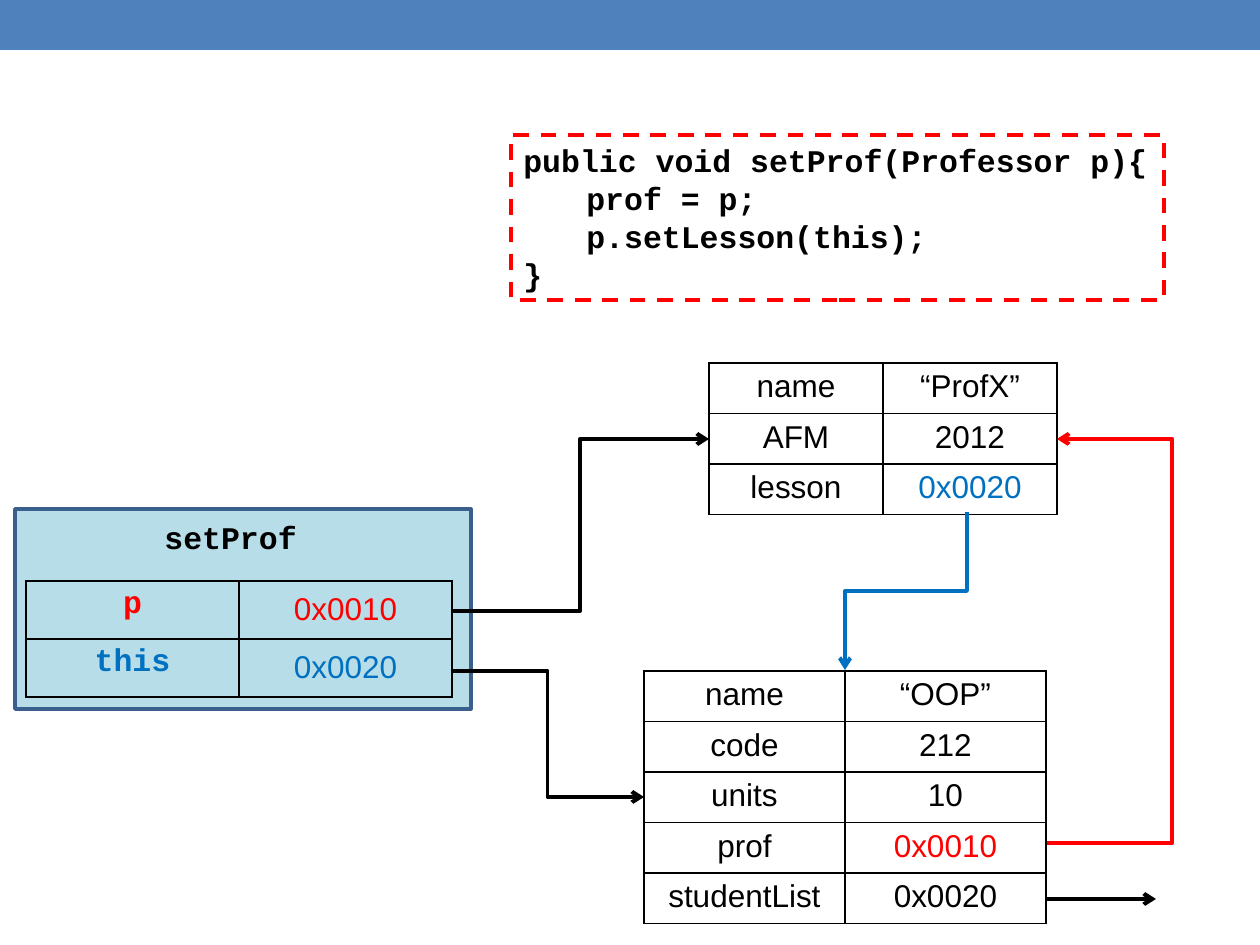
from lxml import etree
from pptx import Presentation
from pptx.dml.color import RGBColor
from pptx.enum.dml import MSO_LINE
from pptx.enum.shapes import MSO_CONNECTOR, MSO_SHAPE
from pptx.enum.text import MSO_ANCHOR, PP_ALIGN
from pptx.oxml.ns import qn
from pptx.util import Emu, Pt

RECT = MSO_SHAPE.RECTANGLE
ELBOW, STRAIGHT = MSO_CONNECTOR.ELBOW, MSO_CONNECTOR.STRAIGHT
DASH = MSO_LINE.DASH
LEFT, CENTER = PP_ALIGN.LEFT, PP_ALIGN.CENTER
TOP, MIDDLE = MSO_ANCHOR.TOP, MSO_ANCHOR.MIDDLE
PX = 914400 / 126
SANS, MONO = "Arial", "Courier New"
COLORS = {
    "black": "000000", "red": "FF0000", "blue": "0070C0",
    "bar": "4F81BD", "frame": "B7DEE8", "frame_edge": "3A5F8C",
}


def px(*values):
    return [Emu(round(value * PX)) for value in values]


def add_text(paragraph, text, font, color, align):
    paragraph.alignment = align
    run = paragraph.add_run()
    run.text = text
    run.font.name = font
    run.font.size = Pt(18)
    run.font.bold = font == MONO
    run.font.color.rgb = RGBColor.from_string(COLORS[color])


prs = Presentation()
prs.slide_width, prs.slide_height = px(1260, 945)
slide = prs.slides.add_slide(prs.slide_layouts[6])
shapes = slide.shapes

panels = [
    ((0, 0, 1260, 50), "bar", None, 0, None),
    ((511, 135, 653, 165), None, "red", 2.25, DASH),
    ((15, 509, 456, 200), "frame", "frame_edge", 2.08, None),
]
for box, fill, edge, width, dash in panels:
    panel = shapes.add_shape(RECT, *px(*box))
    panel.shadow.inherit = False
    if fill:
        panel.fill.solid()
        panel.fill.fore_color.rgb = RGBColor.from_string(COLORS[fill])
    else:
        panel.fill.background()
    if edge:
        panel.line.color.rgb = RGBColor.from_string(COLORS[edge])
        panel.line.width = Pt(width)
        panel.line.dash_style = dash
    else:
        panel.line.fill.background()

labels = [
    ((511, 135, 653, 165),
     ["public void setProf(Professor p){", "\tprof = p;", "\tp.setLesson(this);", "}"]),
    ((152, 512, 158, 50), ["setProf"]),
]
for box, lines in labels:
    frame = shapes.add_textbox(*px(*box)).text_frame
    frame.word_wrap = False
    for index, line in enumerate(lines):
        paragraph = frame.add_paragraph() if index else frame.paragraphs[0]
        add_text(paragraph, line, MONO, "black", LEFT)

stack_frame = [
    [("p", "red", MONO), ("0x0010", "red", SANS)],
    [("this", "blue", MONO), ("0x0020", "blue", SANS)],
]
professor = [
    [("name", "black", SANS), ("“ProfX”", "black", SANS)],
    [("AFM", "black", SANS), ("2012", "black", SANS)],
    [("lesson", "black", SANS), ("0x0020", "blue", SANS)],
]
lesson = [
    [("name", "black", SANS), ("“OOP”", "black", SANS)],
    [("code", "black", SANS), ("212", "black", SANS)],
    [("units", "black", SANS), ("10", "black", SANS)],
    [("prof", "black", SANS), ("0x0010", "red", SANS)],
    [("studentList", "black", SANS), ("0x0020", "black", SANS)],
]
records = [
    (26, 581, 213, 58, stack_frame, MIDDLE),
    (709, 363, 174, 50, professor, TOP),
    (644, 671, 201, 50, lesson, TOP),
]
for left, top, col_width, row_height, rows, value_anchor in records:
    size = (2 * col_width, len(rows) * row_height)
    table = shapes.add_table(len(rows), 2, *px(left, top, *size)).table
    table.first_row = False
    table.horz_banding = False
    for row_index, row in enumerate(rows):
        for col_index, (text, color, font) in enumerate(row):
            cell = table.cell(row_index, col_index)
            cell.fill.background()
            cell.vertical_anchor = value_anchor if col_index else TOP
            add_text(cell.text_frame.paragraphs[0], text, font, color, CENTER)
            properties = cell._tc.get_or_add_tcPr()
            for position, side in enumerate(("lnL", "lnR", "lnT", "lnB")):
                border = etree.Element(qn(f"a:{side}"), w=str(Pt(1)))
                solid = etree.SubElement(border, qn("a:solidFill"))
                etree.SubElement(solid, qn("a:srgbClr"), val=COLORS["black"])
                properties.insert(position, border)

references = [
    (ELBOW, (451, 611, 709, 439), "black", 50000, 0),
    (ELBOW, (451, 671, 644, 797), "black", 50000, 0),
    (STRAIGHT, (1047, 899, 1156, 899), "black", None, 0),
    (ELBOW, (1047, 843, 1057, 439), "red", 1250000, 0),
    (ELBOW, (827, 530, 985, 652), "blue", 50000, 90),
]
for kind, ends, color, bend, rotation in references:
    reference = shapes.add_connector(kind, *px(*ends))
    reference.line.color.rgb = RGBColor.from_string(COLORS[color])
    reference.line.width = Pt(2.25)
    properties = reference._element.spPr
    if bend:
        guides = properties.find(qn("a:prstGeom")).get_or_add_avLst()
        etree.SubElement(guides, qn("a:gd"), name="adj1", fmla=f"val {bend}")
    if rotation:
        properties.find(qn("a:xfrm")).set("rot", str(rotation * 60000))
    etree.SubElement(properties.find(qn("a:ln")), qn("a:tailEnd"), type="arrow")
    etree.SubElement(properties, qn("a:effectLst"))

prs.save("out.pptx")
